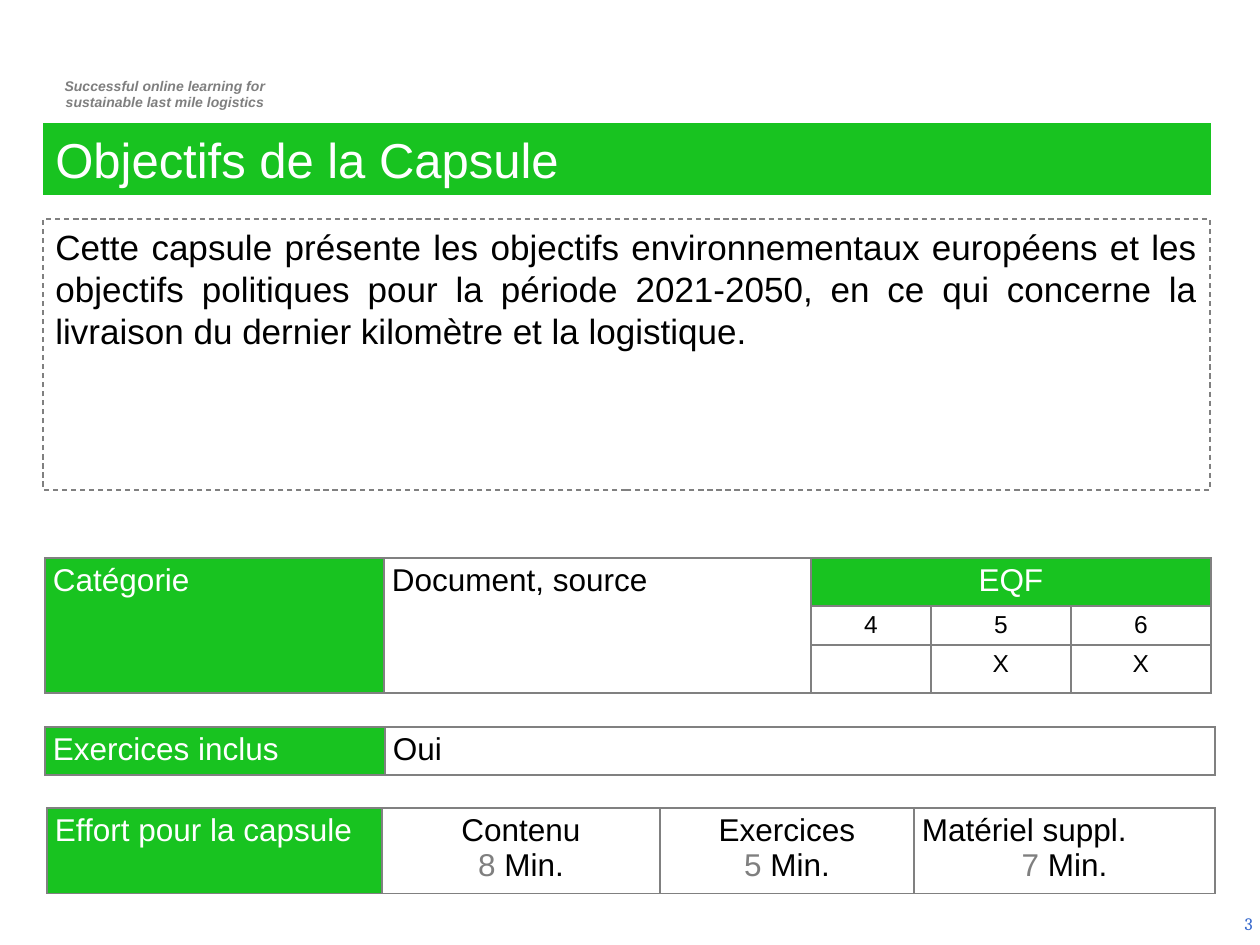
from lxml.etree import SubElement as Sub
from pptx import Presentation
from pptx.dml.color import RGBColor
from pptx.enum.dml import MSO_LINE
from pptx.enum.shapes import MSO_SHAPE as Kind
from pptx.enum.text import MSO_ANCHOR as Anchor, PP_ALIGN as Align
from pptx.oxml.ns import qn
from pptx.util import Emu, Pt

SCALE = 914400 / 126
GREEN, GREY, WHITE, BLACK = "18C320", "808080", "FFFFFF", "000000"
DIM = "7F7F7F"


def px(n):
    return Emu(round(n * SCALE))


def rgb(code):
    return RGBColor.from_string(code)


def paint(fill, code):
    if code:
        fill.solid()
        fill.fore_color.rgb = rgb(code)
    else:
        fill.background()


def write(frame, paras, face="Arial", slant=False):
    for i, (align, size, runs) in enumerate(paras):
        para = frame.add_paragraph() if i else frame.paragraphs[0]
        para.alignment = align
        for text, code in runs:
            run = para.add_run()
            run.text = text
            font = run.font
            font.name, font.size = face, Pt(size)
            font.color.rgb = rgb(code)
            if slant:
                font.bold = font.italic = True


def note(slide, area, paras, anchor=Anchor.TOP, **style):
    frame = slide.shapes.add_textbox(*map(px, area)).text_frame
    frame.word_wrap = True
    frame.vertical_anchor = anchor
    write(frame, paras, **style)


def panel(slide, area, paras, fill=None, line=None):
    shape = slide.shapes.add_shape(Kind.RECTANGLE, *map(px, area))
    shape.shadow.inherit = False
    paint(shape.fill, fill)
    paint(shape.line.fill, line)
    if line:
        shape.line.width = Pt(0.75)
        shape.line.dash_style = MSO_LINE.DASH
    shape.text_frame.word_wrap = True
    shape.text_frame.vertical_anchor = Anchor.TOP
    write(shape.text_frame, paras)


def frame_cell(cell):
    props = cell._tc.get_or_add_tcPr()
    for side in ("a:lnL", "a:lnR", "a:lnT", "a:lnB"):
        edge = Sub(props, qn(side), w=str(Pt(1)))
        Sub(Sub(edge, qn("a:solidFill")), qn("a:srgbClr"), val=GREY)


def grid(slide, left, top, cols, rows, cells, spans=()):
    box = slide.shapes.add_table(
        len(rows), len(cols), px(left), px(top), px(sum(cols)), px(sum(rows)))
    table = box.table
    table.first_row = table.horz_banding = False
    for col, wide in zip(table.columns, cols):
        col.width = px(wide)
    for row, high in zip(table.rows, rows):
        row.height = px(high)
    for r in range(len(rows)):
        for c in range(len(cols)):
            cell = table.cell(r, c)
            cell.margin_left = cell.margin_right = px(8)
            cell.margin_top = cell.margin_bottom = px(5)
            frame_cell(cell)
            fill, paras = cells.get((r, c), (None, []))
            paint(cell.fill, fill)
            write(cell.text_frame, paras)
    for start, end in spans:
        table.cell(*start).merge(table.cell(*end))


def label(text, align=Align.JUSTIFY):
    return GREEN, [(align, 18, [(text, WHITE)])]


def value(text, align=Align.JUSTIFY, size=18):
    return None, [(align, size, [(text, BLACK)])]


def effort(name, time, align=Align.CENTER):
    return None, [(align, 18, [(name, BLACK)]),
                  (Align.CENTER, 18, [(f"{time} ", DIM), ("Min.", BLACK)])]


def main():
    deck = Presentation()
    deck.slide_width, deck.slide_height = px(1260), px(945)
    slide = deck.slides.add_slide(deck.slide_layouts[6])

    motto = ("Successful online learning for", "sustainable last mile logistics")
    note(slide, (37, 71, 256, 46),
         [(Align.CENTER, 8, [(line, DIM)]) for line in motto], slant=True)
    note(slide, (971, 899, 294, 50), [(Align.RIGHT, 10, [("3", "3366CC")])],
         Anchor.MIDDLE, face="Cambria")

    panel(slide, (43, 123, 1168, 72),
          [(Align.LEFT, 28, [("Objectifs de la Capsule", WHITE)])], fill=GREEN)
    goal = ("Cette capsule présente les objectifs environnementaux européens et "
            "les objectifs politiques pour la période 2021-2050, en ce qui "
            "concerne la livraison du dernier kilomètre et la logistique.")
    panel(slide, (43, 219, 1167, 271),
          [(Align.JUSTIFY, 20, [(goal, BLACK)])], line=GREY)

    cells = {(0, 0): label("Catégorie"), (0, 1): value("Document, source"),
             (0, 2): label("EQF", Align.CENTER)}
    marks = {(1, 2): "4", (1, 3): "5", (1, 4): "6", (2, 3): "X", (2, 4): "X"}
    for spot, mark in marks.items():
        cells[spot] = value(mark, Align.CENTER, 14)
    grid(slide, 45, 558, (339, 427, 120, 140, 140), (47, 39, 47), cells,
         [((0, 0), (2, 0)), ((0, 1), (2, 1)), ((0, 2), (0, 4))])

    grid(slide, 45, 727, (340, 830), (48,),
         {(0, 0): label("Exercices inclus"), (0, 1): value("Oui")})

    grid(slide, 47, 808, (335, 278, 254, 301), (85,),
         {(0, 0): label("Effort pour la capsule"),
          (0, 1): effort("Contenu", 8),
          (0, 2): effort("Exercices", 5),
          (0, 3): effort("Matériel suppl.", 7, Align.JUSTIFY)})

    deck.save("out.pptx")


if __name__ == "__main__":
    main()
